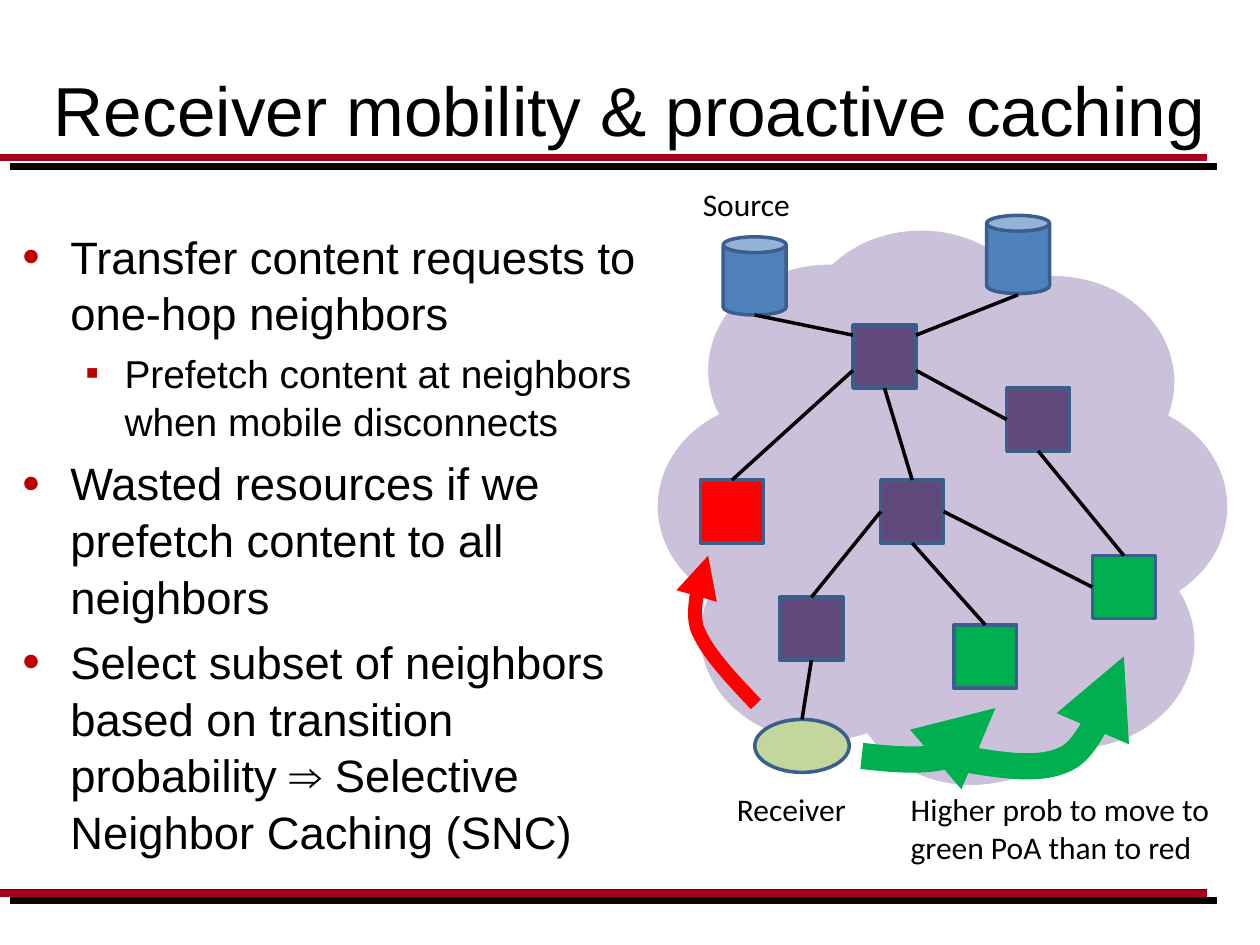
import pptx
import pptx.util
import pptx.dml.color
import pptx.enum.shapes
import pptx.enum.text
import pptx.oxml
import pptx.oxml.ns
from dataclasses import dataclass
from lxml import etree

KIND = pptx.enum.shapes.MSO_SHAPE
ANCHOR = pptx.enum.text.MSO_ANCHOR
NS = 'xmlns:a="http://schemas.openxmlformats.org/drawingml/2006/main"'
TOP, LEFT, BOTTOM, RIGHT = range(4)

# Grid: 100 columns by 75 rows
COLS, ROWS = 100, 75
WIDTH, HEIGHT = pptx.util.Inches(10), pptx.util.Inches(7.5)


@dataclass(frozen=True)
class Theme:
    ink: str = "000000"
    rule: str = "A50021"
    under: str = "0000FF"
    bullet: str = "C00000"
    cloud: str = "CCC1DA"
    edge: str = "3A5F8C"
    disk: str = "4F81BD"
    router: str = "604A7B"
    phone: str = "C3D69B"
    green: str = "00B050"
    red: str = "FF0000"
    head: str = "Arial"
    note: str = "Calibri"
    title: float = 39.6
    body: float = 25.9
    sub: float = 22.2
    label: float = 18


THEME = Theme()


def col(n):
    return round(WIDTH * n / COLS)


def row(n):
    return round(HEIGHT * n / ROWS)


def rgb(code):
    return pptx.dml.color.RGBColor.from_string(code)


def add_xml(parent, xml):
    parent.append(pptx.oxml.parse_xml(xml))


def add_text(frame, text, font=THEME.head, size=THEME.label, color=THEME.ink,
             first=True, before=0, space=None):
    para = frame.paragraphs[0] if first else frame.add_paragraph()
    para.space_before = pptx.util.Pt(before)
    if space:
        para.line_spacing = space
    run = para.add_run()
    run.text = text
    run.font.name = font
    run.font.size = pptx.util.Pt(size)
    run.font.color.rgb = rgb(color)
    return para


def add_box(slide, x, y, w, h, wrap=True, anchor=ANCHOR.TOP):
    frame = slide.shapes.add_textbox(col(x), row(y), col(w), row(h)).text_frame
    frame.word_wrap = wrap
    frame.vertical_anchor = anchor
    return frame


def set_bullet(para, mark, indent, hang, level, scale):
    props = para._p.get_or_add_pPr()
    props.set("marL", str(col(indent)))
    props.set("indent", str(-col(hang)))
    para.level = level
    add_xml(props, f'<a:buClr {NS}><a:srgbClr val="{THEME.bullet}"/></a:buClr>')
    add_xml(props, f'<a:buSzPct {NS} val="{scale * 1000}"/>')
    add_xml(props, f'<a:buFont {NS} typeface="Arial"/>')
    add_xml(props, f'<a:buChar {NS} char="{mark}"/>')


def add_node(slide, kind, x, y, w, h, fill, edge=None):
    node = slide.shapes.add_shape(kind, col(x), row(y), col(w), row(h))
    node.shadow.inherit = False
    node.fill.solid()
    node.fill.fore_color.rgb = rgb(fill)
    if edge:
        node.line.color.rgb = rgb(edge)
        node.line.width = pptx.util.Pt(2)
    else:
        node.line.fill.background()
    return node


def add_line(slide, start, end, color=THEME.ink, width=2, shadow=""):
    """Each end is a point on the grid or a pair of node and side."""
    spots = [(0, 0) if hasattr(p[0], "shape_id") else (col(p[0]), row(p[1]))
             for p in (start, end)]
    line = slide.shapes.add_connector(
        pptx.enum.shapes.MSO_CONNECTOR.STRAIGHT, *spots[0], *spots[1])
    for point, join in ((start, line.begin_connect), (end, line.end_connect)):
        if hasattr(point[0], "shape_id"):
            join(*point)
    line.line.color.rgb = rgb(color)
    line.line.width = pptx.util.Pt(width)
    add_xml(line._element.spPr, f"<a:effectLst {NS}>{shadow}</a:effectLst>")


def curve(a, b, c, d, steps=16):
    for i in range(1, steps + 1):
        t = i / steps
        u = 1 - t
        yield tuple(u**3 * p + 3 * u * u * t * q + 3 * u * t * t * r + t**3 * s
                    for p, q, r, s in zip(a, b, c, d))


def add_arrow(slide, points, color, width):
    """Draw two joined curves through seven control points."""
    path = [*curve(*points[:4]), *curve(*points[3:])]
    build = slide.shapes.build_freeform(col(points[0][0]), row(points[0][1]))
    build.add_line_segments([(col(x), row(y)) for x, y in path], close=False)
    arrow = build.convert_to_shape()
    arrow.shadow.inherit = False
    arrow.fill.background()
    arrow.line.color.rgb = rgb(color)
    arrow.line.width = pptx.util.Pt(width)
    etree.SubElement(arrow.line._get_or_add_ln(),
                     pptx.oxml.ns.qn("a:tailEnd"), type="triangle")


def add_rules(slide):
    shadow = (f'<a:outerShdw dist="{pptx.util.Pt(7.8)}" dir="2400000" algn="ctr" '
              f'rotWithShape="0"><a:srgbClr val="{THEME.ink}"/></a:outerShdw>')
    for low, high in ((12.5, 12.5), (70.8, 70.9)):
        add_line(slide, (0, low), (95.8, low), THEME.under, 4, shadow)
        add_line(slide, (0, high), (95.8, high), THEME.rule, 4)


def add_words(slide):
    frame = add_box(slide, 3.3, 3, 96.7, 11.2, anchor=ANCHOR.MIDDLE)
    add_text(frame, "Receiver mobility & proactive caching", size=THEME.title)

    frame = add_box(slide, 0.8, 17.5, 50.8, 55)
    points = (
        (0, "Transfer content requests to one-hop neighbors"),
        (1, "Prefetch content at neighbors when mobile disconnects"),
        (0, "Wasted resources if we prefetch content to all neighbors"),
        (0, "Select subset of neighbors based on transition probability ⇒ "
            "Selective Neighbor Caching (SNC)"))
    looks = (("•", 3.8, 3.8, 0, 110), ("▪", 8.1, 3.1, 1, 100))
    for i, (level, text) in enumerate(points):
        size = THEME.sub if level else THEME.body
        para = add_text(frame, text, size=size, first=i == 0,
                        before=size / 5 if i else 0, space=1.04)
        set_bullet(para, *looks[level])


def add_labels(slide):
    for text, place, wrap in (
            ("Source", (54.8, 14.2, 9, 4), False),
            ("Receiver", (57.5, 62.2, 10.8, 4), False),
            ("Higher prob to move to green PoA than to red",
             (71.3, 62.2, 31.4, 7.1), True)):
        add_text(add_box(slide, *place, wrap=wrap), text, font=THEME.note)


def add_net(slide):
    # Cloud
    for x, y in ((58.1, 27.3), (63.5, 18.3), (74, 21.9), (55.6, 42), (67.5, 45.5),
                 (75.6, 42.6), (56.2, 21), (52.2, 31.8), (78.2, 31.8), (67.5, 32.4)):
        add_node(slide, KIND.OVAL, x, y, 19.2, 16.8, THEME.cloud)

    # Sources, receiver and routers
    for x, y in ((57.4, 18.8), (78.3, 17.1)):
        add_node(slide, KIND.CAN, x, y, 5, 6.2, THEME.disk, THEME.edge)
    phone = add_node(slide, KIND.OVAL, 59.9, 57.1, 7.5, 4.2, THEME.phone, THEME.edge)
    hub, east, mid, access, near, far, west = (
        add_node(slide, KIND.RECTANGLE, x, y, 5, 5, fill, THEME.edge)
        for x, y, fill in (
            (67.7, 25.8, THEME.router), (79.9, 30.8, THEME.router),
            (69.9, 38.1, THEME.router), (61.9, 47.4, THEME.router),
            (75.7, 49.6, THEME.green), (86.7, 44.1, THEME.green),
            (55.6, 38.1, THEME.red)))

    # Links
    for start, end in (
            ((59.9, 25), (67.7, 26.6)), ((72.7, 26.6), (80.8, 23.4)),
            ((72.7, 29.4), (east, LEFT)), ((west, TOP), (67.7, 29.4)),
            ((hub, BOTTOM), (mid, TOP)), ((east, BOTTOM), (far, TOP)),
            ((mid, BOTTOM), (near, TOP)), ((access, TOP), (mid, LEFT)),
            ((mid, RIGHT), (far, LEFT)), ((phone, TOP), (access, BOTTOM))):
        add_line(slide, start, end)

    # Moves of the receiver
    for color, width, points in (
            (THEME.green, 15, ((68.4, 60), (71, 60.3), (73.7, 60.5), (75.4, 59.9),
                               (77.2, 59.3), (79, 56.2), (79, 56.2))),
            (THEME.green, 15, ((76.8, 60.3), (79.9, 60.8), (83, 61.3), (85, 60),
                               (87.1, 58.6), (89.2, 52.1), (89.2, 52.1))),
            (THEME.red, 8, ((60, 55.9), (58, 53.8), (56, 51.7), (55.3, 49.8),
                            (54.7, 47.8), (56.2, 44.1), (56.2, 44.1)))):
        add_arrow(slide, points, color, width)


def main():
    deck = pptx.Presentation()
    deck.slide_width, deck.slide_height = WIDTH, HEIGHT
    slide = deck.slides.add_slide(deck.slide_layouts[6])
    add_rules(slide)
    add_words(slide)
    add_net(slide)
    add_labels(slide)
    deck.save("out.pptx")


if __name__ == "__main__":
    main()
